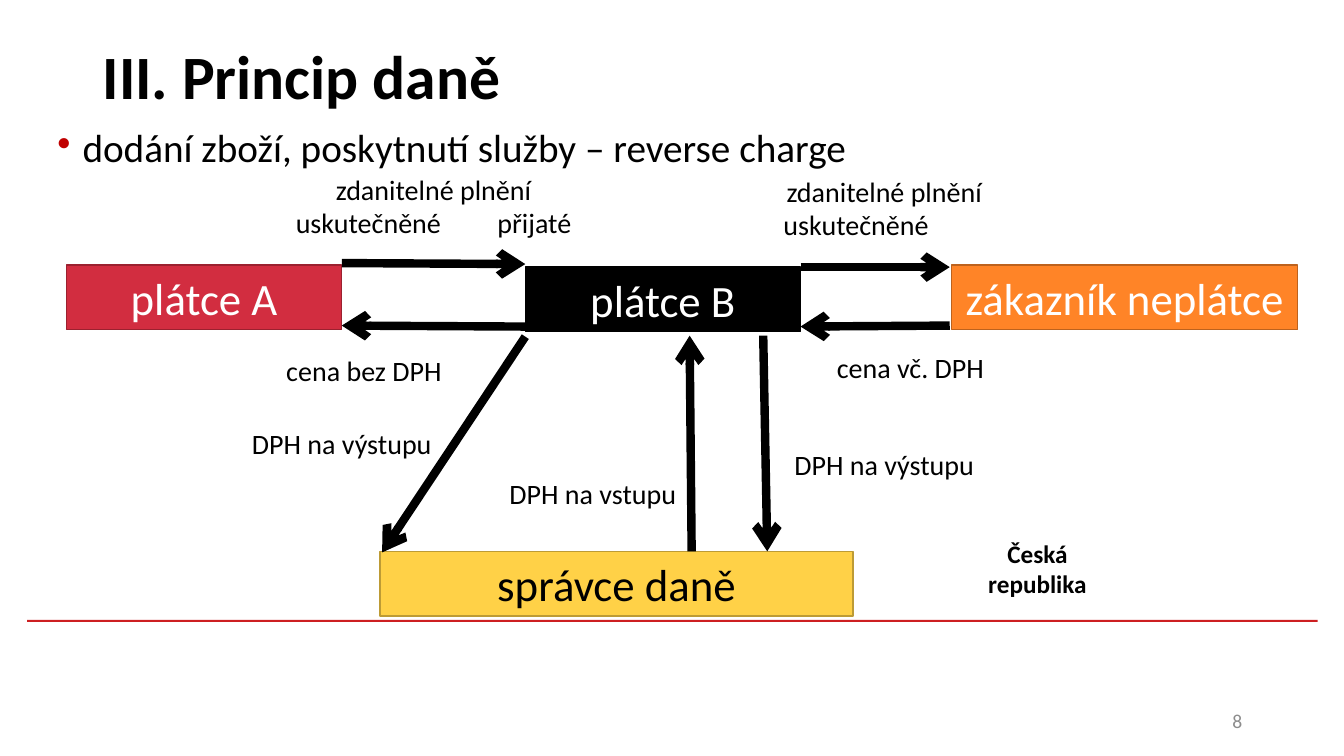
from dataclasses import dataclass, field
from typing import Any, NamedTuple

from lxml.etree import SubElement
from pptx import Presentation
from pptx.dml.color import RGBColor
from pptx.enum.shapes import MSO_CONNECTOR as Connector, MSO_SHAPE as Shape
from pptx.enum.text import MSO_ANCHOR as Anchor, PP_ALIGN as Align
from pptx.oxml.ns import qn
from pptx.util import Inches, Pt

BLACK, WHITE = "000000", "FFFFFF"
LABEL_WIDTH, LABEL_HEIGHT = 2.84, 0.44
PARTY_HEIGHT = 0.64


class Area(NamedTuple):
    left: float
    top: float
    width: float
    height: float


@dataclass
class Label:
    text: str
    area: Area
    size: float = 20
    color: str = BLACK
    bold: bool = False
    frame: dict[str, Any] = field(default_factory=dict)
    paragraph: dict[str, Any] = field(default_factory=lambda: {"alignment": Align.CENTER})


class Party(NamedTuple):
    name: str
    area: Area
    fill: str
    border: str
    color: str = WHITE


class Flow(NamedTuple):
    start: tuple[float, float]
    end: tuple[float, float]


def rgb(value: str) -> RGBColor:
    return RGBColor.from_string(value)


def apply(target: Any, formats: dict[str, Any]) -> None:
    for attribute, value in formats.items():
        setattr(target, attribute, value)


def write(frame: Any, label: Label) -> None:
    frame.text = label.text
    apply(frame, {"word_wrap": True} | label.frame)
    paragraph = frame.paragraphs[0]
    apply(paragraph, label.paragraph)
    for run in paragraph.runs:
        apply(run.font, {"name": "Calibri", "size": Pt(label.size), "bold": label.bold})
        run.font.color.rgb = rgb(label.color)


def add_label(slide: Any, label: Label) -> Any:
    box = slide.shapes.add_textbox(*map(Inches, label.area))
    write(box.text_frame, label)
    return box.text_frame.paragraphs[0]


def add_block(slide: Any, area: Area, fill: str) -> Any:
    block = slide.shapes.add_shape(Shape.RECTANGLE, *map(Inches, area))
    block.shadow.inherit = False
    block.fill.solid()
    block.fill.fore_color.rgb = rgb(fill)
    block.line.fill.background()
    return block


def add_party(slide: Any, party: Party) -> None:
    block = add_block(slide, party.area, party.fill)
    block.line.color.rgb = rgb(party.border)
    block.line.width = Pt(1)
    write(block.text_frame, Label(party.name, party.area, 32, party.color,
                                  frame={"word_wrap": False, "vertical_anchor": Anchor.MIDDLE}))


def add_flow(slide: Any, flow: Flow) -> None:
    arrow = slide.shapes.add_connector(Connector.STRAIGHT, *map(Inches, flow.start + flow.end))
    arrow.line.color.rgb = rgb(BLACK)
    arrow.line.width = Pt(6)
    properties = arrow.line._get_or_add_ln()
    SubElement(properties, qn("a:tailEnd"), type="arrow")
    SubElement(properties.getparent(), qn("a:effectLst"))


def add_bullet(paragraph: Any, color: str) -> None:
    properties = paragraph._p.get_or_add_pPr()
    apply_indent = {"marL": Inches(0.25), "indent": Inches(-0.25)}
    for name, length in apply_indent.items():
        properties.set(name, str(length))
    SubElement(SubElement(properties, qn("a:buClr")), qn("a:srgbClr"), val=color)
    SubElement(properties, qn("a:buChar"), char="•")


def caption(text: str, left: float, top: float) -> Label:
    return Label(text, Area(left, top, LABEL_WIDTH, LABEL_HEIGHT))


LABELS = [
    Label("III. Princip daně", Area(0.92, 0.02, 11.5, 1.45), 44, bold=True,
          frame={"vertical_anchor": Anchor.MIDDLE}, paragraph={}),
    Label("8", Area(9.42, 6.95, 3, 0.4), 14, "8C8C8C",
          frame={"vertical_anchor": Anchor.MIDDLE}, paragraph={"alignment": Align.RIGHT}),
    Label("zdanitelné plnění\vuskutečněné \tpřijaté", Area(2.46, 1.66, 3.68, 1.28)),
    Label("zdanitelné plnění\vuskutečněné \t", Area(6.93, 1.68, 3.68, 0.77)),
    caption("cena bez DPH", 2.19, 3.46),
    caption("cena vč. DPH", 7.61, 3.43),
    caption("DPH na výstupu", 1.97, 4.18),
    caption("DPH na vstupu", 4.46, 4.68),
    caption("DPH na výstupu", 7.35, 4.39),
    Label("Česká republika", Area(9.42, 5.29, 1.74, 0.71), 18, bold=True),
]
TOPIC = Label("dodání zboží, poskytnutí služby – reverse charge",
              Area(0.47, 1.23, 12.39, 0.71), 28, paragraph={"line_spacing": 0.9})
PARTIES = [
    Party("plátce A", Area(0.66, 2.63, 2.73, PARTY_HEIGHT), "D22D40", "9B212F"),
    Party("plátce B", Area(5.21, 2.65, 2.73, PARTY_HEIGHT), BLACK, BLACK),
    Party("zákazník neplátce", Area(9.44, 2.63, 3.43, PARTY_HEIGHT), "FF8427", "BD621D"),
    Party("správce daně", Area(3.77, 5.47, 4.69, PARTY_HEIGHT), "FFD147", "BD9B35", BLACK),
]
FLOWS = [
    Flow((3.39, 2.61), (5.21, 2.62)),
    Flow((5.21, 3.24), (3.39, 3.23)),
    Flow((7.94, 2.65), (9.42, 2.65)),
    Flow((9.42, 3.23), (7.94, 3.24)),
    Flow((7.57, 3.33), (7.61, 5.47)),
    Flow((6.86, 5.47), (6.84, 3.33)),
    Flow((5.21, 3.34), (3.79, 5.48)),
]


def main() -> None:
    deck = Presentation()
    apply(deck, {"slide_width": Inches(13.33), "slide_height": Inches(7.5)})
    slide = deck.slides.add_slide(deck.slide_layouts[6])
    add_block(slide, Area(0.27, 6.15, 12.8, 0.02), "CD1F21")
    for label in LABELS:
        add_label(slide, label)
    add_bullet(add_label(slide, TOPIC), "C00000")
    for party in PARTIES:
        add_party(slide, party)
    for flow in FLOWS:
        add_flow(slide, flow)
    deck.save("out.pptx")


if __name__ == "__main__":
    main()
